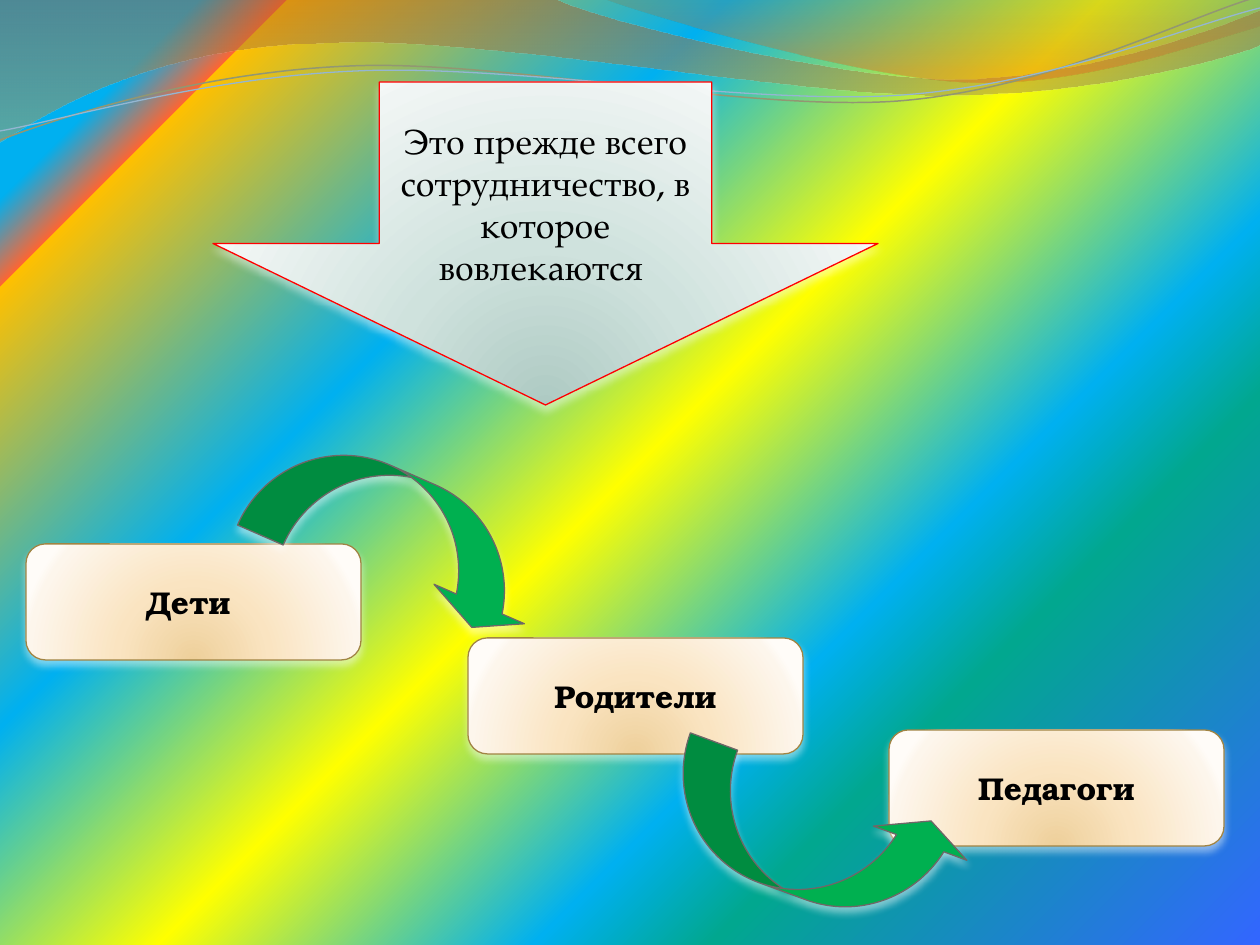
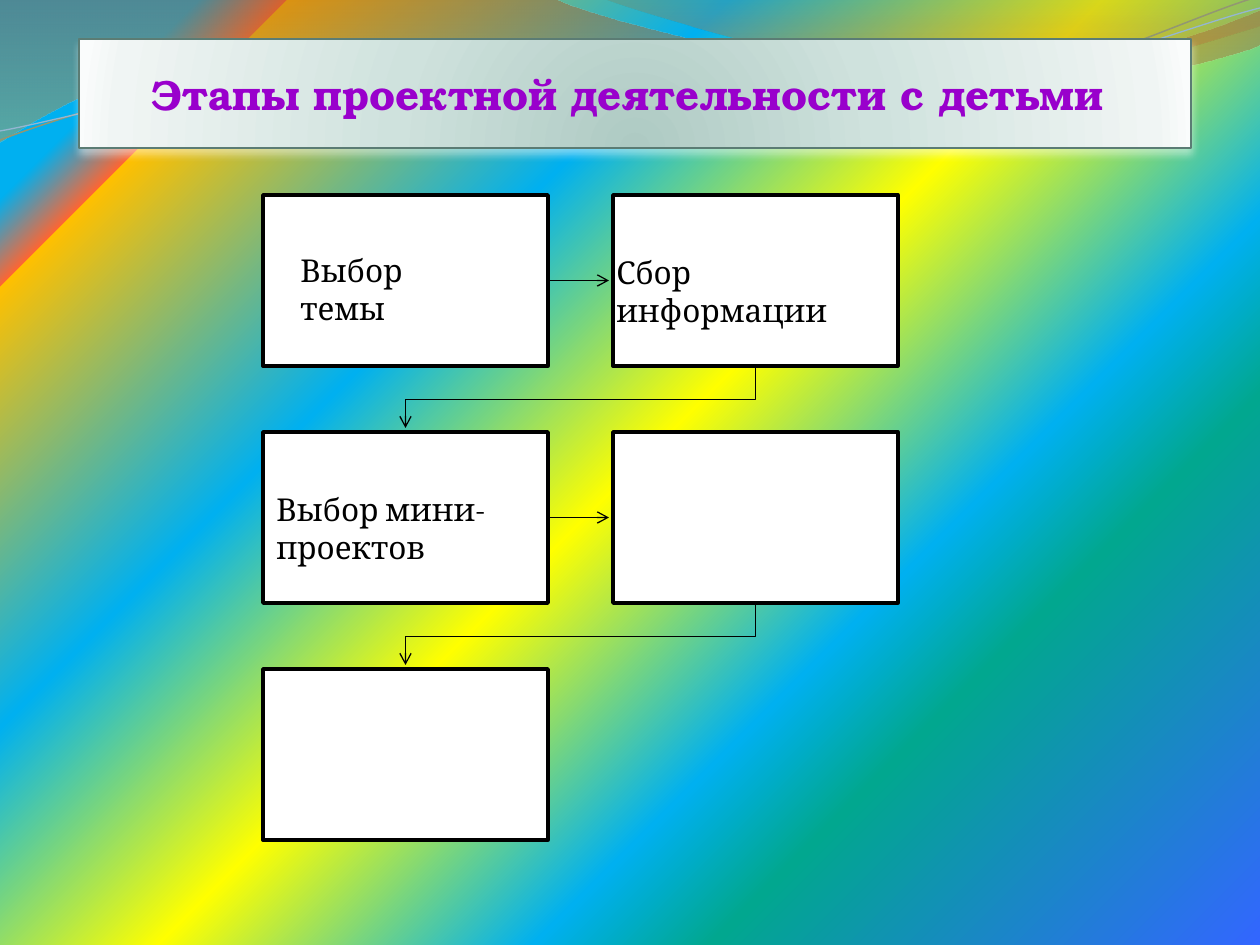
from dataclasses import dataclass

from pptx import Presentation
from pptx.dml.color import RGBColor
from pptx.enum.shapes import MSO_CONNECTOR, MSO_SHAPE
from pptx.enum.text import MSO_ANCHOR, MSO_AUTO_SIZE, PP_ALIGN
from pptx.oxml import parse_xml
from pptx.oxml.ns import nsdecls, qn
from pptx.util import Emu, Pt


@dataclass(frozen=True)
class Theme:
    """Gradient stops are (percent, colour) or (percent, colour, opacity)."""
    black: str = "000000"
    white: str = "FFFFFF"
    green: str = "00B050"
    violet: str = "9900CC"
    red: str = "FF0000"
    teal: str = "5B7C74"
    brown: str = "A18443"
    grey: str = "6F6767"
    sage: tuple = ((0, "AECAC3"), (43, "CFE2DD"), (93, "F0F5F4"), (100, "FAFCFC"))
    sand: tuple = ((0, "EED09B"), (43, "FAE4C1"), (93, "FDF6EC"), (100, "FFFCF8"))
    sky: tuple = ((9, "00B0F0", 49), (13, "FF6633"), (13, "FFC000"), (33, "00B0F0", 49),
                  (50, "FFFF00"), (67, "00B0F0", 49), (75, "01A78F"), (100, "3366FF"))
    rust: tuple = ((0, "AF5C29", 45), (100, "9DA66B", 55))
    amber: tuple = ((0, "7D835B", 30), (80, "DD6B24", 45))
    slab: str = "TeX Gyre Bonum"
    book: str = "TeX Gyre Pagella"
    serif: str = "Cambria"
    big: int = 24
    mid: int = 20
    base: int = 18


T = Theme()
GLOW = (50, 130, 50, -30)
CORNER = (0, 0, 100, 100)

# Each step is a line end (2 numbers) or a Bezier curve (6 numbers), in px.
BANDS = (
    (T.rust, [(0, 0), (554, -1), (600, 21, 837, 79, 955, 79), (1075, 79, 1207, 33, 1260, 11),
              (1261, 45), (1239, 55, 1096, 96, 940, 95), (784, 95, 481, 35, 324, 43),
              (163, 45, 58, 105, -1, 142)]),
    (T.amber, [(604, -1), (641, 14, 859, 78, 969, 82), (1079, 87, 1211, 40, 1260, 26),
               (1260, 0)]),
)
THREADS = (
    ("929772", 0.85, [(0, 140), (60, 117, 199, 72, 349, 66), (498, 59, 747, 112, 898, 101),
                      (1050, 89, 1182, 19, 1257, -3)]),
    ("94B6D2", 0.75, [(0, 131), (59, 121, 207, 77, 357, 71), (508, 64, 752, 106, 903, 95),
                      (1053, 84, 1187, 26, 1260, 8)]),
)


def px(n):
    return Emu(round(n * 914400 / 126))


def rgb(code):
    return RGBColor.from_string(code)


def tint(code, alpha=100):
    return f'<a:srgbClr val="{code}"><a:alpha val="{alpha * 1000}"/></a:srgbClr>'


def blend(fill, host, stops, focus=None):
    """Give host a gradient: radial towards focus, else from top to bottom."""
    marks = "".join(f'<a:gs pos="{at * 1000}">{tint(*hue)}</a:gs>' for at, *hue in stops)
    if focus:
        rect = " ".join(f'{side}="{n * 1000}"' for side, n in zip("ltrb", focus))
        kind = f'<a:path path="circle"><a:fillToRect {rect}/></a:path>'
    else:
        kind = '<a:lin ang="5400000" scaled="0"/>'
    fill.solid()
    host.replace(host.find(qn("a:solidFill")), parse_xml(
        f'<a:gradFill {nsdecls("a")} rotWithShape="1"><a:gsLst>{marks}</a:gsLst>'
        f'{kind}</a:gradFill>'))


def stroke(shape, color, width=0.75):
    shape.line.color.rgb = rgb(color)
    shape.line.width = Pt(width)


def glow(shape):
    spot = shape.element.spPr.find(qn("a:effectLst"))
    spot.append(parse_xml(
        f'<a:outerShdw {nsdecls("a")} blurRad="57150" dist="38100" dir="5400000" '
        f'algn="ctr" rotWithShape="0">{tint(T.white, 48)}</a:outerShdw>'))


def write(shape, text, font=T.slab, size=T.base, color=T.black, bold=False,
          align=PP_ALIGN.CENTER, anchor=MSO_ANCHOR.MIDDLE, wrap=True):
    frame = shape.text_frame
    frame.text = text
    frame.auto_size = MSO_AUTO_SIZE.NONE
    frame.word_wrap = wrap
    frame.vertical_anchor = anchor
    para = frame.paragraphs[0]
    para.alignment = align
    for run in para.runs:
        run.font.name = font
        run.font.size = Pt(size)
        run.font.bold = bold
        run.font.color.rgb = rgb(color)


def coat(shape, fill, line, width=0.75):
    """A colour fills the shape flat, stops fill it with a radial gradient."""
    shape.shadow.inherit = False
    if isinstance(fill, str):
        shape.fill.solid()
        shape.fill.fore_color.rgb = rgb(fill)
    else:
        blend(shape.fill, shape.element.spPr, fill, GLOW)
    stroke(shape, line, width)


def form(slide, kind, box, *look):
    shape = slide.shapes.add_shape(kind, *map(px, box))
    coat(shape, *look)
    return shape


def wave(slide, steps, close):
    """Build an outline through all points, then bend its curve steps."""
    dots = [(px(x), px(y)) for step in steps for x, y in zip(step[::2], step[1::2])]
    pen = slide.shapes.build_freeform(*dots[0])
    pen.add_line_segments(dots[1:], close=close)
    shape = pen.convert_to_shape()
    shape.shadow.inherit = False
    legs = iter(list(shape.element.iter(qn("a:lnTo"))))
    for step in steps[1:]:
        leg = next(legs)
        if len(step) == 6:
            curve = parse_xml(f'<a:cubicBezTo {nsdecls("a")}/>')
            leg.addprevious(curve)
            for part in (leg, next(legs), next(legs)):
                curve.append(part[0])
                part.getparent().remove(part)
    return shape


def dress(deck, slide):
    """Give the master its background and waves, drawn by way of a slide."""
    master = deck.slide_master
    back = master.background.fill
    back.solid()
    blend(back, master.element.find(".//" + qn("p:bgPr")), T.sky, CORNER)
    waves = []
    for stops, steps in BANDS:
        band = wave(slide, steps, True)
        blend(band.fill, band.element.spPr, stops)
        band.line.fill.background()
        waves.append(band)
    for color, width, steps in THREADS:
        thread = wave(slide, steps, False)
        thread.fill.background()
        stroke(thread, color, width)
        waves.append(thread)
    for num, shape in enumerate(waves, 20):
        shape.element.nvSpPr.cNvPr.set("id", str(num))
        master.shapes.element.append(shape.element)


def card(slide, x, y, text):
    shape = form(slide, MSO_SHAPE.ROUNDED_RECTANGLE, (x, y, 335, 116), T.sand, T.brown)
    glow(shape)
    write(shape, text, bold=True)


def swoop(slide, box, turn, flip=False):
    shape = form(slide, MSO_SHAPE.CURVED_DOWN_ARROW, box, T.green, T.grey)
    glow(shape)
    for n, value in enumerate((0.43, 0.85, 0.21)):
        shape.adjustments[n] = value
    shape.rotation = turn
    if flip:
        shape.element.spPr.xfrm.set("flipV", "1")


def arrow(slide, kind, start, end):
    link = slide.shapes.add_connector(kind, *map(px, (*start, *end)))
    stroke(link, T.black)
    props = link.element.spPr
    props.find(qn("a:ln")).append(parse_xml(f'<a:tailEnd {nsdecls("a")} type="arrow"/>'))
    props.append(parse_xml(f'<a:effectLst {nsdecls("a")}/>'))
    return link


def bend(slide, start, end):
    """Draw an elbow arrow that leaves downwards and turns left, then down."""
    mid_x, mid_y = (start[0] + end[0]) / 2, (start[1] + end[1]) / 2
    half_w, half_h = (end[1] - start[1]) / 2, (start[0] - end[0]) / 2
    link = arrow(slide, MSO_CONNECTOR.ELBOW, (mid_x - half_w, mid_y - half_h),
                 (mid_x + half_w, mid_y + half_h))
    props = link.element.spPr
    props.xfrm.set("rot", "5400000")
    props.find(".//" + qn("a:avLst")).append(
        parse_xml(f'<a:gd {nsdecls("a")} name="adj1" fmla="val 54000"/>'))


def label(slide, box, text, wrap=False):
    shape = slide.shapes.add_textbox(*map(px, box))
    write(shape, text, font=T.serif, align=PP_ALIGN.LEFT, anchor=MSO_ANCHOR.TOP, wrap=wrap)


def team(slide):
    card(slide, 889, 730, "Педагоги")
    point = form(slide, MSO_SHAPE.DOWN_ARROW, (213, 82, 665, 323), T.sage, T.red)
    glow(point)
    write(point, "Это прежде всего сотрудничество, в которое вовлекаются ",
          font=T.book, size=T.mid)
    card(slide, 26, 544, "Дети ")
    swoop(slide, (248, 475, 305, 116), 23.6)
    card(slide, 468, 638, "Родители")
    swoop(slide, (661, 782, 306, 117), 20.1, flip=True)


def head(slide, text):
    title = slide.shapes.title
    title.left, title.top, title.width, title.height = map(px, (79, 39, 1112, 109))
    title.element.spPr.append(parse_xml(
        f'<a:prstGeom {nsdecls("a")} prst="roundRect"><a:avLst/></a:prstGeom>'))
    coat(title, T.sage, T.teal)
    glow(title)
    write(title, text, size=T.big, color=T.violet, bold=True)


def flow(slide, count=5):
    """Lay out the stages in two columns and join each to the next."""
    left, top, wide, high, step_x, step_y, gap = 263, 195, 285, 171, 350, 237, 4
    spots = [(left + n % 2 * step_x, top + n // 2 * step_y) for n in range(count)]
    boxes = [form(slide, MSO_SHAPE.RECTANGLE, (*spot, wide, high), T.white, T.black, 2)
             for spot in spots]
    for n, ((x, y), (to_x, to_y)) in enumerate(zip(spots, spots[1:])):
        if y == to_y:
            mid = y + high / 2
            link = arrow(slide, MSO_CONNECTOR.STRAIGHT, (x + wide, mid), (to_x - gap, mid))
            link.begin_connect(boxes[n], 3)
        else:
            bend(slide, (x + wide / 2, y + high), (to_x + wide / 2, to_y - gap))


def main():
    deck = Presentation()
    deck.slide_width, deck.slide_height = px(1260), px(945)
    first = deck.slides.add_slide(deck.slide_layouts[6])
    dress(deck, first)
    team(first)

    second = deck.slides.add_slide(deck.slide_layouts[5])
    flow(second)
    head(second, "Этапы проектной деятельности с детьми ")
    label(second, (604, 247, 301, 50), "Сбор\vинформации")
    label(second, (288, 245, 208, 50), "Выбор\vтемы")
    label(second, (264, 484, 247, 89), "Выбор мини-проектов", wrap=True)
    deck.save("out.pptx")


if __name__ == "__main__":
    main()
